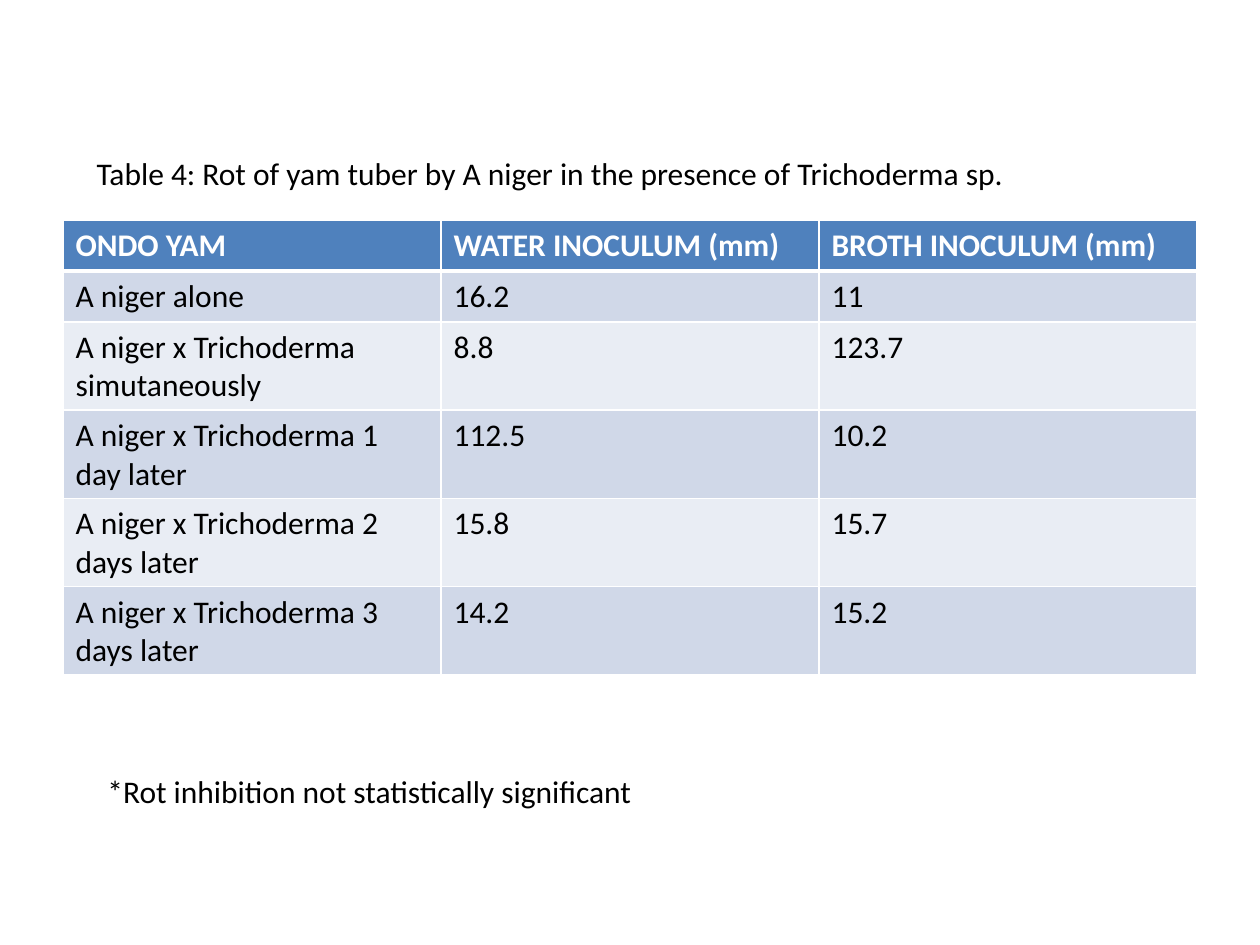
from lxml import etree
from pptx import Presentation
from pptx.dml.color import RGBColor
from pptx.enum.text import MSO_ANCHOR, MSO_AUTO_SIZE, PP_ALIGN
from pptx.oxml.ns import qn
from pptx.util import Inches, Pt

LEFT = PP_ALIGN.LEFT
TOP = MSO_ANCHOR.TOP
FIT_SHAPE = MSO_AUTO_SIZE.SHAPE_TO_FIT_TEXT
PX_PER_INCH = 126
TITLE_ONLY = 5
FONT = "Calibri"
BLACK, WHITE = "000000", "FFFFFF"
HEADER_FILL = "4F81BD"
BAND_FILLS = ("E9EDF4", "D0D8E8")
ROW_HEIGHT = 51

ROT_ROWS = [
    ("ONDO YAM", "WATER INOCULUM (mm)", "BROTH INOCULUM (mm)"),
    ("A niger alone", "16.2", "11"),
    ("A niger x Trichoderma simutaneously", "8.8", "123.7"),
    ("A niger x Trichoderma 1 day later", "112.5", "10.2"),
    ("A niger x Trichoderma 2 days later", "15.8", "15.7"),
    ("A niger x Trichoderma 3 days later", "14.2", "15.2"),
]


def px(length):
    """Turn pixels into EMU."""
    return round(Inches(length / PX_PER_INCH))


def rgb(color):
    """Turn a hex string into a colour."""
    return RGBColor.from_string(color)


def write_text(text_frame, text, color=BLACK, bold=False):
    """Write one left-aligned paragraph in the slide's text style."""
    text_frame.text = text
    paragraph = text_frame.paragraphs[0]
    paragraph.alignment = LEFT
    font = paragraph.runs[0].font
    font.name, font.size, font.bold = FONT, Pt(18), bold
    font.color.rgb = rgb(color)


def place_line(shape, box, text):
    """Place a shape in a box with a single unwrapped line of text."""
    shape.left, shape.top, shape.width, shape.height = map(px, box)
    text_frame = shape.text_frame
    text_frame.word_wrap = False
    text_frame.auto_size = FIT_SHAPE
    text_frame.vertical_anchor = TOP
    write_text(text_frame, text)


def set_borders(cell, bottom_width):
    """Give a cell white borders, with its own width at the bottom."""
    properties = cell._tc.get_or_add_tcPr()
    widths = {"a:lnL": 1, "a:lnR": 1, "a:lnT": 1, "a:lnB": bottom_width}
    for tag, width in widths.items():
        line = etree.SubElement(properties, qn(tag), w=str(Pt(width)))
        fill = etree.SubElement(line, qn("a:solidFill"))
        etree.SubElement(fill, qn("a:srgbClr"), val=WHITE)


def add_rot_table(slide, box):
    """Add the banded table of rot measurements."""
    frame = slide.shapes.add_table(len(ROT_ROWS), len(ROT_ROWS[0]), *map(px, box))
    for row_index, values in enumerate(ROT_ROWS):
        is_header = row_index == 0
        fill = HEADER_FILL if is_header else BAND_FILLS[row_index % 2]
        for column_index, value in enumerate(values):
            cell = frame.table.cell(row_index, column_index)
            write_text(cell.text_frame, value, WHITE if is_header else BLACK, is_header)
            set_borders(cell, 3 if is_header else 1)
            cell.fill.solid()
            cell.fill.fore_color.rgb = rgb(fill)


def build_slide(presentation):
    """Build the slide with its caption, table and footnote."""
    slide = presentation.slides.add_slide(presentation.slide_layouts[TITLE_ONLY])
    place_line(
        slide.shapes.title,
        (84, 148, 936, 51),
        "Table 4: Rot of yam tuber by A niger in the presence of Trichoderma sp.",
    )
    add_rot_table(slide, (63, 220, 1134, ROW_HEIGHT * len(ROT_ROWS)))
    footnote_box = (95, 766, 556, 51)
    footnote = slide.shapes.add_textbox(*map(px, footnote_box))
    place_line(footnote, footnote_box, "*Rot inhibition not statistically significant")


def main():
    """Create and save the presentation."""
    presentation = Presentation()
    presentation.slide_width = px(1260)
    presentation.slide_height = px(945)
    build_slide(presentation)
    presentation.save("out.pptx")


if __name__ == "__main__":
    main()
